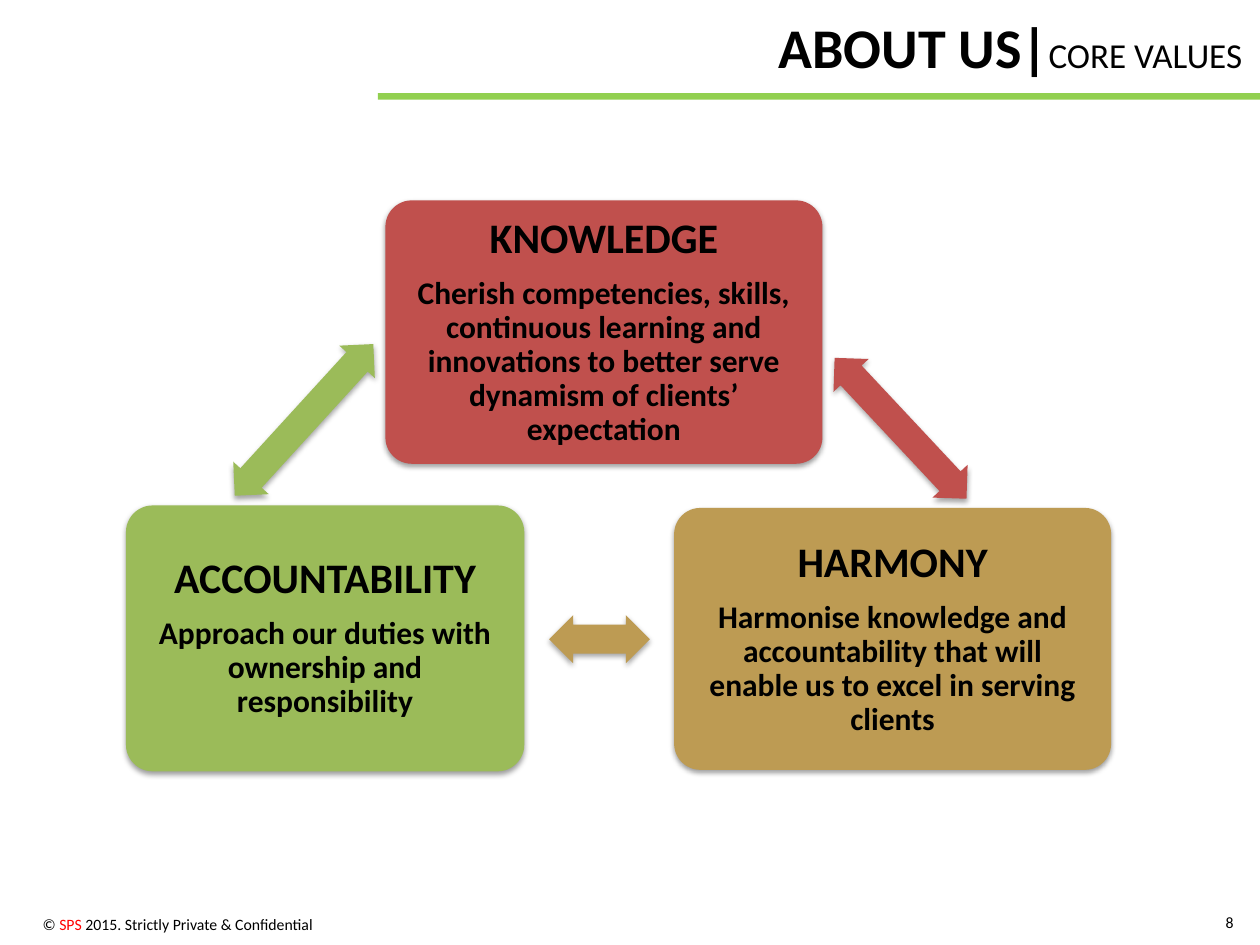
from lxml import etree
from pptx import Presentation
from pptx import util as u
from pptx.dml import color
from pptx.enum import shapes, text
from pptx.oxml import ns


def rgb(value):
    return color.RGBColor.from_string(value)


def add_run(paragraph, wording, size, bold=False, ink="000000"):
    run = paragraph.add_run()
    run.text = wording
    run.font.name = "Calibri"
    run.font.size = u.Pt(size)
    run.font.bold = bold
    run.font.color.rgb = rgb(ink)


presentation = Presentation()
presentation.slide_width = u.Cm(25.4)
presentation.slide_height = u.Cm(19.05)
slide = presentation.slides.add_slide(presentation.slide_layouts[5])

rule = slide.shapes.add_shape(
    shapes.MSO_SHAPE.RECTANGLE, u.Cm(7.62), u.Cm(1.88), u.Cm(17.78), u.Cm(0.13))
rule.shadow.inherit = False
rule.fill.solid()
rule.fill.fore_color.rgb = rgb("92D050")
rule.line.fill.background()

title = slide.shapes.title
title.left, title.top = u.Cm(15.44), u.Cm(0.13)
title.width, title.height = u.Cm(9.96), u.Cm(1.63)
title.text_frame.auto_size = text.MSO_AUTO_SIZE.NONE
title.text_frame.vertical_anchor = text.MSO_ANCHOR.TOP
title_paragraph = title.text_frame.paragraphs[0]
title_paragraph.alignment = text.PP_ALIGN.LEFT
add_run(title_paragraph, "ABOUT US|", 32, True)
add_run(title_paragraph, "CORE VALUES", 20)

RED, GOLD, GREEN = "C0504D", "BD9B53", "9BBB59"
CARD, ARROW = shapes.MSO_SHAPE.ROUNDED_RECTANGLE, shapes.MSO_SHAPE.LEFT_RIGHT_ARROW
adjustments = {CARD: [0.1], ARROW: [0.6, 0.5]}
shadows = {CARD: (1.6, 38), ARROW: (1.8, 35)}
diagram = [
    (CARD, RED, (7.77, 4.04, 8.81, 5.31), 0,
     ["KNOWLEDGE", "Cherish competencies, skills, continuous learning and "
      "innovations to better serve dynamism of clients’ expectation"]),
    (ARROW, RED, (16.21, 8.15, 3.89, 0.97), 46.9, []),
    (CARD, GOLD, (13.59, 10.24, 8.81, 5.28), 0,
     ["HARMONY", "Harmonise knowledge and accountability that will enable "
      "us to excel in serving clients"]),
    (ARROW, GOLD, (11.07, 12.4, 2.03, 0.97), 180, []),
    (CARD, GREEN, (2.54, 10.19, 8.03, 5.36), 0,
     ["ACCOUNTABILITY", "Approach our duties with ownership and responsibility"]),
    (ARROW, GREEN, (4.06, 7.98, 4.14, 0.97), 312.4, []),
]
for kind, fill, bounds, rotation, wordings in diagram:
    shape = slide.shapes.add_shape(kind, *[u.Cm(length) for length in bounds])
    for index, adjustment in enumerate(adjustments[kind]):
        shape.adjustments[index] = adjustment
    shape.rotation = rotation
    shape.fill.solid()
    shape.fill.fore_color.rgb = rgb(fill)
    shape.line.fill.background()

    shape.shadow.inherit = False
    distance, opacity = shadows[kind]
    effects = shape.element.spPr.find(ns.qn("a:effectLst"))
    shadow = etree.SubElement(
        effects, ns.qn("a:outerShdw"), blurRad=str(u.Pt(3.1)),
        dist=str(u.Pt(distance)), dir="5400000", rotWithShape="0")
    shade = etree.SubElement(shadow, ns.qn("a:srgbClr"), val="000000")
    etree.SubElement(shade, ns.qn("a:alpha"), val=str(opacity * 1000))

    frame = shape.text_frame
    frame.word_wrap = True
    frame.vertical_anchor = text.MSO_ANCHOR.MIDDLE
    frame.margin_left = frame.margin_right = u.Cm(0.41)
    frame.margin_top = frame.margin_bottom = u.Cm(0.41)
    for index, wording in enumerate(wordings):
        paragraph = frame.add_paragraph() if index else frame.paragraphs[0]
        size = 18 if index else 24
        paragraph.alignment = text.PP_ALIGN.CENTER
        paragraph.line_spacing = 0.9
        paragraph.space_after = u.Pt(size * 0.35)
        add_run(paragraph, wording, size, True)

footers = [
    ((-0.84, 18.31, 7.39, 0.64), text.MSO_ANCHOR.TOP,
     [("© ", "000000"), ("SPS ", "FF0000"),
      ("2015. Strictly Private & Confidential", "000000")]),
    ((24.1, 18.08, 1.02, 1.02), text.MSO_ANCHOR.MIDDLE, [("8", "000000")]),
]
for bounds, anchor, runs in footers:
    footer = slide.shapes.add_textbox(*[u.Cm(length) for length in bounds])
    footer.text_frame.word_wrap = True
    footer.text_frame.vertical_anchor = anchor
    paragraph = footer.text_frame.paragraphs[0]
    paragraph.alignment = text.PP_ALIGN.RIGHT
    for wording, ink in runs:
        add_run(paragraph, wording, 9, ink=ink)

presentation.save("out.pptx")
